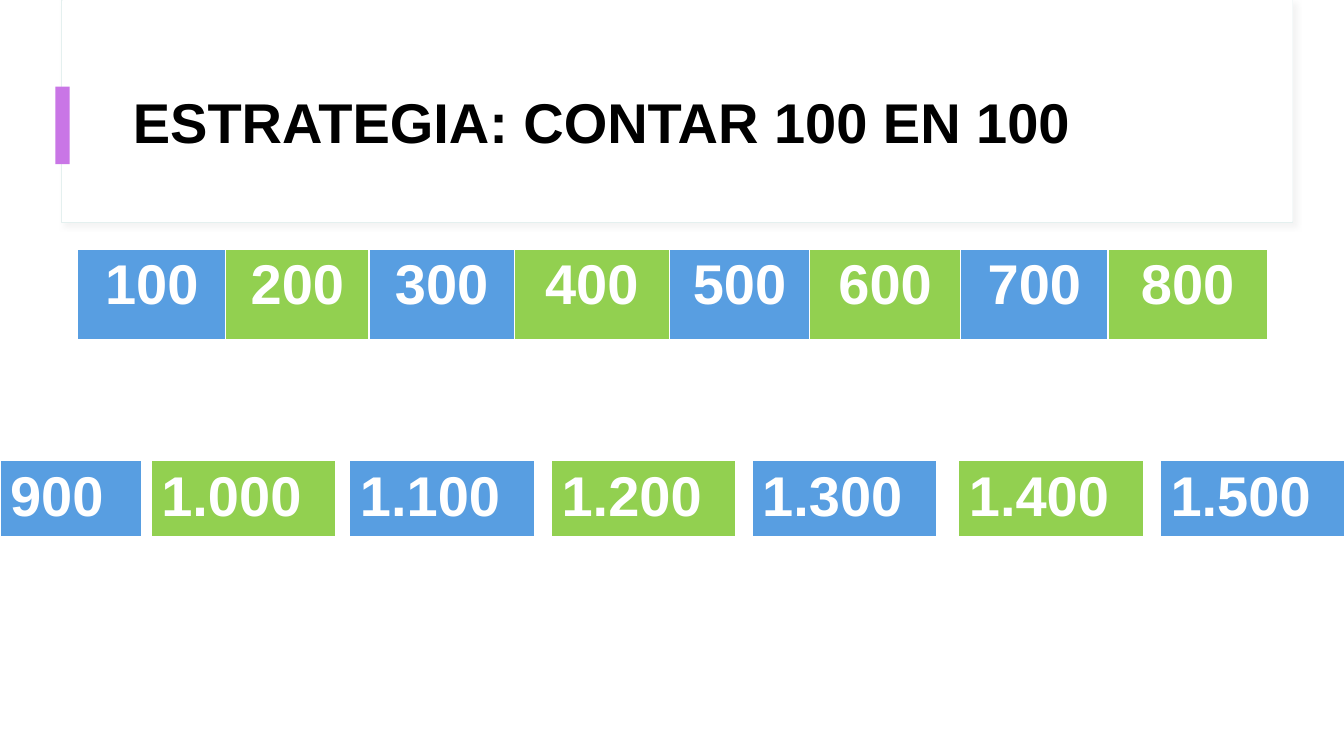
from dataclasses import dataclass

from lxml.etree import SubElement
from pptx import Presentation
from pptx.dml.color import RGBColor
from pptx.enum.shapes import MSO_SHAPE as Shape
from pptx.enum.text import MSO_ANCHOR as Anchor, PP_ALIGN as Align
from pptx.oxml import parse_xml
from pptx.oxml.ns import nsdecls, qn
from pptx.slide import Slide
from pptx.text.text import TextFrame
from pptx.util import Inches, Pt


@dataclass(frozen=True)
class Theme:
    font: str = "Arial"
    size: int = 40
    title: str = "000000"
    white: str = "FFFFFF"
    blue: str = "589EE1"
    green: str = "92D050"
    accent: str = "C976E6"
    frame: str = "E4F0EF"
    shadow: str = "D9D9D9"


@dataclass(frozen=True)
class Panel:
    left: float
    top: float
    width: float
    height: float
    fill: str
    line: str = ""
    shadow: str = ""


@dataclass(frozen=True)
class NumberStrip:
    left: float
    top: float
    height: float
    widths: tuple[float, ...]
    first_number: int
    align: Align


THEME = Theme()
STEP = 100
BORDERS = {"lnL": 1, "lnR": 1, "lnT": 1, "lnB": 3}

PANELS = (
    Panel(0.61, 0, 12.21, 2.21, THEME.white, THEME.frame, THEME.shadow),
    Panel(0.62, 0, 12.2, 2.2, THEME.white),
    Panel(0.55, 0.86, 0.14, 0.77, THEME.accent),
)
HUNDREDS = NumberStrip(
    0.77, 2.47, 0.91, (1.47, 1.42, 1.44, 1.54, 1.39, 1.5, 1.46, 1.58), 100, Align.CENTER
)
NINE_HUNDRED = NumberStrip(0, 4.57, 0.72, (1.4,), 900, Align.LEFT)
THOUSANDS = tuple(
    NumberStrip(left, 4.57, 0.72, (1.83,), 1000 + STEP * index, Align.LEFT)
    for index, left in enumerate((1.5, 3.47, 5.47, 7.46, 9.51, 11.51))
)


def rgb(color: str) -> RGBColor:
    return RGBColor.from_string(color)


def write(frame: TextFrame, text: str, color: str, align: Align) -> None:
    frame.text = text
    paragraph = frame.paragraphs[0]
    paragraph.alignment = align
    font = paragraph.runs[0].font
    font.name, font.size, font.bold = THEME.font, Pt(THEME.size), True
    font.color.rgb = rgb(color)


def draw_panel(slide: Slide, panel: Panel) -> None:
    box = slide.shapes.add_shape(
        Shape.RECTANGLE, *map(Inches, (panel.left, panel.top, panel.width, panel.height))
    )
    box.shadow.inherit = False
    box.fill.solid()
    box.fill.fore_color.rgb = rgb(panel.fill)
    if panel.line:
        box.line.color.rgb = rgb(panel.line)
        box.line.width = Pt(0.75)
    else:
        box.line.fill.background()
    if panel.shadow:
        effects = box.element.spPr.find(qn("a:effectLst"))
        effects.append(parse_xml(
            f'<a:outerShdw {nsdecls("a")} blurRad="{Pt(4)}" dist="{Pt(3)}" dir="2700000">'
            f'<a:srgbClr val="{panel.shadow}"><a:alpha val="30000"/></a:srgbClr></a:outerShdw>'
        ))


def draw_title(slide: Slide, text: str) -> None:
    title = slide.shapes.add_textbox(*map(Inches, (1.22, 0.6, 11.12, 1.29)))
    frame = title.text_frame
    frame.word_wrap = True
    frame.vertical_anchor = Anchor.MIDDLE
    write(frame, text, THEME.title, Align.LEFT)
    frame.paragraphs[0].line_spacing = 0.9


def draw_strip(slide: Slide, strip: NumberStrip) -> None:
    place = map(Inches, (strip.left, strip.top, sum(strip.widths), strip.height))
    table = slide.shapes.add_table(1, len(strip.widths), *place).table
    table.first_row = table.horz_banding = False
    for column, width in enumerate(strip.widths):
        table.columns[column].width = Inches(width)
        number = strip.first_number + STEP * column
        cell = table.cell(0, column)
        write(cell.text_frame, f"{number:,}".replace(",", "."), THEME.white, strip.align)
        properties = cell._tc.get_or_add_tcPr()
        for side, points in BORDERS.items():
            border = SubElement(properties, qn(f"a:{side}"), w=str(Pt(points)))
            paint = SubElement(border, qn("a:solidFill"))
            SubElement(paint, qn("a:srgbClr"), val=THEME.white)
        cell.fill.solid()
        odd_hundred = number // STEP % 2 == 1
        cell.fill.fore_color.rgb = rgb(THEME.blue if odd_hundred else THEME.green)


def main() -> None:
    deck = Presentation()
    deck.slide_width, deck.slide_height = Inches(13.33), Inches(7.5)
    slide = deck.slides.add_slide(deck.slide_layouts[6])
    for panel in PANELS:
        draw_panel(slide, panel)
    draw_title(slide, "ESTRATEGIA: CONTAR 100 EN 100")
    for strip in (HUNDREDS, NINE_HUNDRED, *THOUSANDS):
        draw_strip(slide, strip)
    deck.save("out.pptx")


if __name__ == "__main__":
    main()
